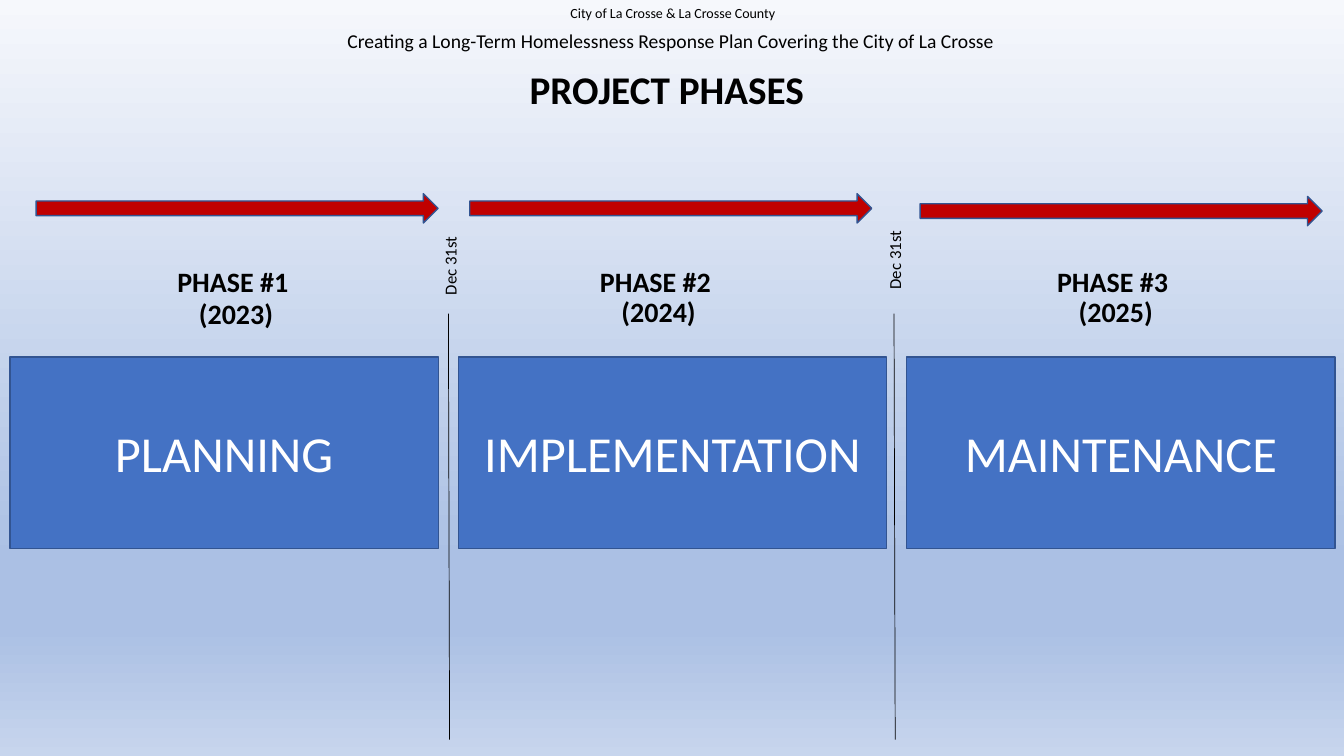
from lxml import etree
from pptx import Presentation
from pptx.dml.color import RGBColor
from pptx.enum import shapes, text
from pptx.oxml.ns import qn
from pptx.util import Cm, Pt

deck = Presentation()
deck.slide_width, deck.slide_height = Cm(33.87), Cm(19.05)
slide = deck.slides.add_slide(deck.slide_layouts[6])
items = slide.shapes


def paint(fmt, tone):
    if hasattr(fmt, "solid"):
        fmt.solid()
        fmt = fmt.fore_color
    fmt.rgb = RGBColor.from_string(tone)


def write(shape, words, size, tone="000000", bold=False):
    frame = shape.text_frame
    look = {"word_wrap": True, "auto_size": text.MSO_AUTO_SIZE.NONE}
    for key, val in look.items():
        setattr(frame, key, val)
    para = frame.paragraphs[0]
    para.alignment = text.PP_ALIGN.CENTER
    run = para.add_run()
    run.text = words
    for key, val in {"name": "Calibri", "size": Pt(size), "bold": bold}.items():
        setattr(run.font, key, val)
    paint(run.font.color, tone)


# Background gradient, top to bottom
back = slide.background.fill
back.gradient()
back.gradient_angle = 270
stops = slide.element.find(".//" + qn("a:gsLst"))
for old in list(stops):
    stops.remove(old)
for pos, tone in [(0, "F6F8FC"), (74, "ABC0E4"), (83, "ABC0E4"), (100, "C7D5ED")]:
    stop = etree.SubElement(stops, qn("a:gs"), pos=str(pos * 1000))
    etree.SubElement(stop, qn("a:srgbClr"), val=tone)

# Headings
heads = [
    (0.08, 0, 0.69, "City of La Crosse & La Crosse County ", 10, False),
    (0.05, 0.61, 0.86, "Creating a Long-Term Homelessness Response Plan "
     "Covering the City of La Crosse ", 14, False),
    (0, 1.52, 1.45, "PROJECT PHASES ", 28, True),
]
for left, top, high, words, size, bold in heads:
    box = items.add_textbox(Cm(left), Cm(top), Cm(33.83), Cm(high))
    write(box, words, size, bold=bold)

# Phases: arrow, label, year and block
phases = [
    ("PLANNING", 0.91, 4.88, 0.91, 6.53, 7.34),
    ("IMPLEMENTATION", 11.84, 4.88, 11.56, 6.53, 7.29),
    ("MAINTENANCE", 23.19, 4.95, 23.08, 6.55, 7.29),
]
for num, (name, left, top, side, high, low) in enumerate(phases):
    arrow = items.add_shape(shapes.MSO_SHAPE.RIGHT_ARROW,
                            Cm(left), Cm(top), Cm(10.13), Cm(0.74))
    block = items.add_shape(shapes.MSO_SHAPE.RECTANGLE,
                            Cm(0.25 + 11.3 * num), Cm(9), Cm(10.8), Cm(4.82))
    for shape, tone in [(arrow, "C00000"), (block, "4472C4")]:
        shape.shadow.inherit = False
        paint(shape.fill, tone)
        paint(shape.line.fill, "325491")
        shape.line.width = Pt(1)
    write(block, name, 36, "FFFFFF")
    block.text_frame.vertical_anchor = text.MSO_ANCHOR.MIDDLE
    for y, words in [(high, f"PHASE #{num + 1} "), (low, f"({2023 + num})")]:
        box = items.add_textbox(Cm(side), Cm(y), Cm(10.08), Cm(1.12))
        write(box, words, 20, bold=True)

# Year-end dividers with upright dates
for x, left, top in [(11.3, 6.3, 6.32), (22.53, 17.5, 6.17)]:
    rule = items.add_connector(shapes.MSO_CONNECTOR.STRAIGHT,
                               Cm(x), Cm(7.9), Cm(x + 0.03), Cm(18.64))
    paint(rule.line.fill, "000000")
    rule.line.width = Pt(0.5)
    etree.SubElement(rule.element.spPr, qn("a:effectLst"))
    date = items.add_textbox(Cm(left), Cm(top), Cm(10.08), Cm(0.76))
    date.rotation = 270
    write(date, "Dec 31st", 12)

deck.save("out.pptx")
